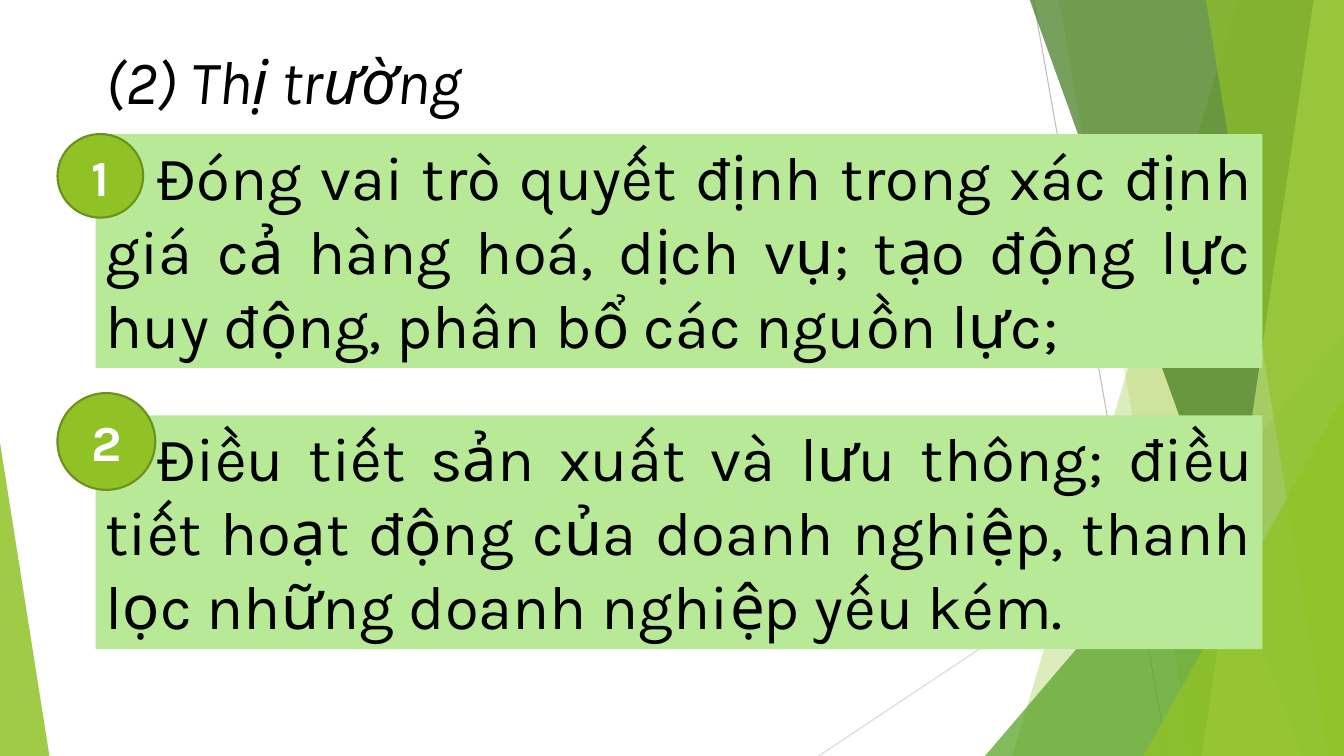
from dataclasses import dataclass

from lxml import etree
from pptx import Presentation
from pptx.dml.color import RGBColor
from pptx.enum.shapes import MSO_CONNECTOR, MSO_SHAPE
from pptx.enum.text import MSO_ANCHOR, MSO_AUTO_SIZE, PP_ALIGN
from pptx.oxml.ns import qn
from pptx.util import Inches, Pt

STRAIGHT = MSO_CONNECTOR.STRAIGHT
RECTANGLE, OVAL, TRIANGLE = MSO_SHAPE.RECTANGLE, MSO_SHAPE.OVAL, MSO_SHAPE.ISOSCELES_TRIANGLE
TOP, MIDDLE = MSO_ANCHOR.TOP, MSO_ANCHOR.MIDDLE
LEFT, CENTER, JUSTIFY = PP_ALIGN.LEFT, PP_ALIGN.CENTER, PP_ALIGN.JUSTIFY
NO_AUTOFIT = MSO_AUTO_SIZE.NONE
TITLE_ONLY = 5
WIDTH, HEIGHT = 13.33, 7.5


@dataclass(frozen=True)
class Theme:
    font: str = "Karla"
    text: str = "000000"
    badge_text: str = "FFFFFF"
    panel: str = "B7E996"
    lime: str = "90C226"
    badge_line: str = "6B901C"
    pale_lime: str = "C0E474"
    green: str = "54A021"
    forest: str = "3F7819"
    ray: str = "BFBFBF"
    pale_ray: str = "D9D9D9"
    body_size: int = 44
    badge_size: int = 36


THEME = Theme()

RAYS = [
    ((10.25, 0), (11.58, 7.5), THEME.ray),
    ((13.33, 4.03), (8.12, 7.5), THEME.pale_ray),
]
BACK_BANDS = [(12.28, 10.04, THEME.lime, 30), (10.5, 11.83, THEME.lime, 20)]
FRONT_BANDS = [
    (10.21, 12.91, THEME.forest, 70),
    (13.03, 11.92, THEME.pale_lime, 70),
    (11.96, 13.18, THEME.lime, 65),
]
STATEMENTS = [
    ("1", (0.95, 1.33, 11.57, 2.32), (0.85, 0.83), 0,
     "Đóng vai trò quyết định trong xác định giá cả hàng hoá, dịch vụ; "
     "tạo động lực huy động, phân bổ các nguồn lực;"),
    ("2", (0.95, 4.12, 11.57, 2.32), (0.97, 0.96), -0.22,
     "Điều tiết sản xuất và lưu thông; điều tiết hoạt động của doanh nghiệp, "
     "thanh lọc những doanh nghiệp yếu kém."),
]


def color(value):
    return RGBColor.from_string(value)


def paint(shape, fill, opacity=100, line=None):
    shape.shadow.inherit = False
    shape.fill.solid()
    shape.fill.fore_color.rgb = color(fill)
    if opacity < 100:
        fill_color = shape.fill._xPr.find(qn("a:solidFill"))[0]
        etree.SubElement(fill_color, qn("a:alpha")).set("val", str(opacity * 1000))
    if line:
        shape.line.color.rgb = color(line)
        shape.line.width = Pt(1.5)
    else:
        shape.line.fill.background()


def write(shape, text, anchor, alignment, text_color=THEME.text, **font_format):
    frame = shape.text_frame
    frame.text = text
    frame.word_wrap = True
    frame.auto_size = NO_AUTOFIT
    frame.vertical_anchor = anchor
    paragraph = frame.paragraphs[0]
    paragraph.alignment = alignment
    font = paragraph.runs[0].font
    values = {"name": THEME.font, "size": Pt(THEME.body_size), **font_format}
    for name, value in values.items():
        setattr(font, name, value)
    font.color.rgb = color(text_color)
    return paragraph


def add_preset(slide, preset, box):
    return slide.shapes.add_shape(preset, *map(Inches, box))


def add_ray(slide, start, end, line_color):
    ray = slide.shapes.add_connector(STRAIGHT, *map(Inches, start + end))
    ray.line.color.rgb = color(line_color)
    ray.line.width = Pt(0.75)
    etree.SubElement(ray._element.spPr, qn("a:effectLst"))


def add_band(slide, top_x, bottom_x, fill, opacity):
    builder = slide.shapes.build_freeform(Inches(top_x), Inches(-0.01))
    corners = [(WIDTH, -0.01), (WIDTH, HEIGHT), (bottom_x, HEIGHT)]
    builder.add_line_segments([(Inches(x), Inches(y)) for x, y in corners])
    paint(builder.convert_to_shape(), fill, opacity)


def add_corner(slide, left, top, width, apex, fill, opacity):
    corner = add_preset(slide, TRIANGLE, (left, top, width, HEIGHT - top))
    corner.adjustments[0] = apex
    paint(corner, fill, opacity)


def add_backdrop(slide):
    for ray in RAYS:
        add_ray(slide, *ray)
    for band in BACK_BANDS:
        add_band(slide, *band)
    add_corner(slide, 9.77, 3.33, 3.56, 1, THEME.green, 72)
    for band in FRONT_BANDS:
        add_band(slide, *band)
    add_corner(slide, 11.34, 3.93, 1.99, 1, THEME.lime, 80)
    add_corner(slide, 0, 4.39, 0.49, 0, THEME.lime, 85)


def add_title(slide, box, text):
    title = slide.shapes.title
    for name, value in zip(("left", "top", "width", "height"), box):
        setattr(title, name, Inches(value))
    write(title, text, TOP, LEFT, italic=True)


def add_statement(slide, number, box, badge_size, badge_rise, text):
    left, top = box[:2]
    panel = add_preset(slide, RECTANGLE, box)
    paint(panel, THEME.panel)
    paragraph = write(panel, text, TOP, JUSTIFY)
    paragraph._p.get_or_add_pPr().set("indent", str(Inches(0.5)))

    badge = add_preset(slide, OVAL, (left - 0.38, top + badge_rise, *badge_size))
    paint(badge, THEME.lime, line=THEME.badge_line)
    write(badge, number, MIDDLE, CENTER, THEME.badge_text,
          size=Pt(THEME.badge_size), bold=True)


def main():
    presentation = Presentation()
    presentation.slide_width = Inches(WIDTH)
    presentation.slide_height = Inches(HEIGHT)
    slide = presentation.slides.add_slide(presentation.slide_layouts[TITLE_ONLY])
    add_backdrop(slide)
    add_title(slide, (0.95, 0.38, 4.23, 0.84), "(2) Thị trường")
    for statement in STATEMENTS:
        add_statement(slide, *statement)
    presentation.save("out.pptx")


if __name__ == "__main__":
    main()
